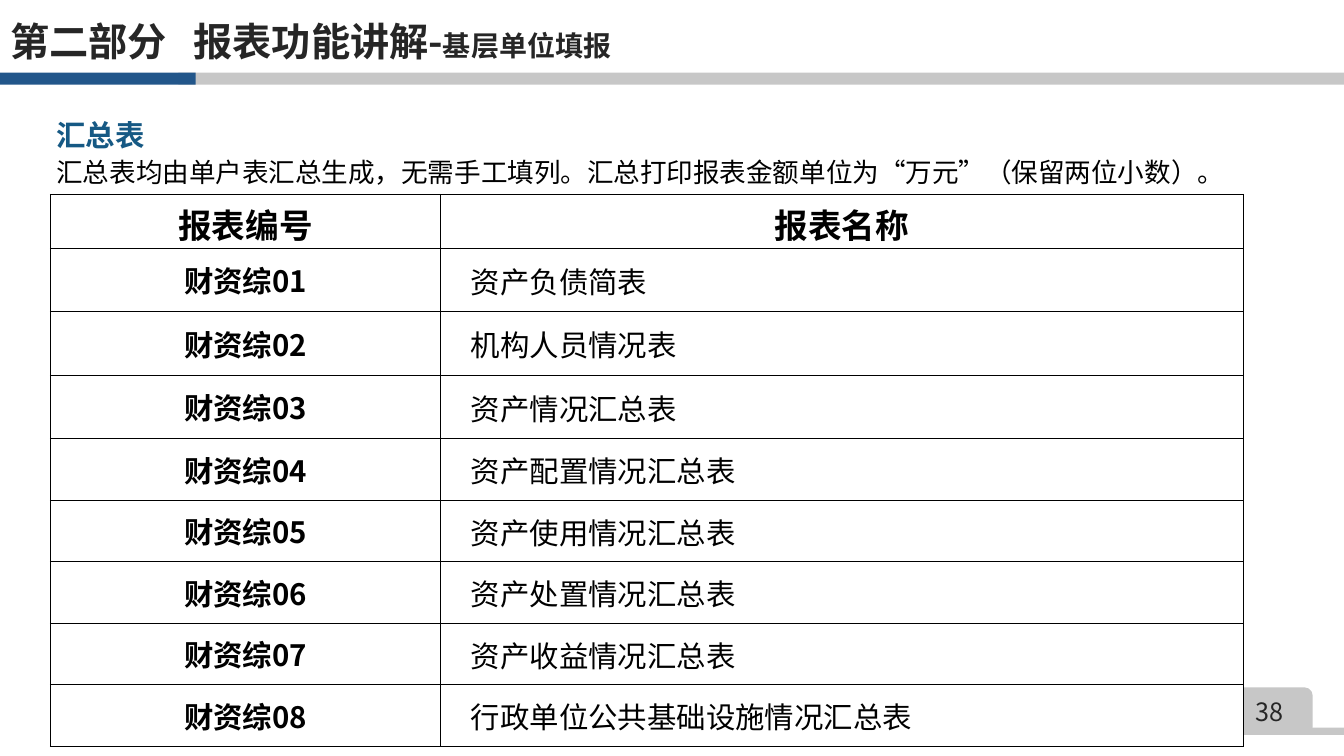
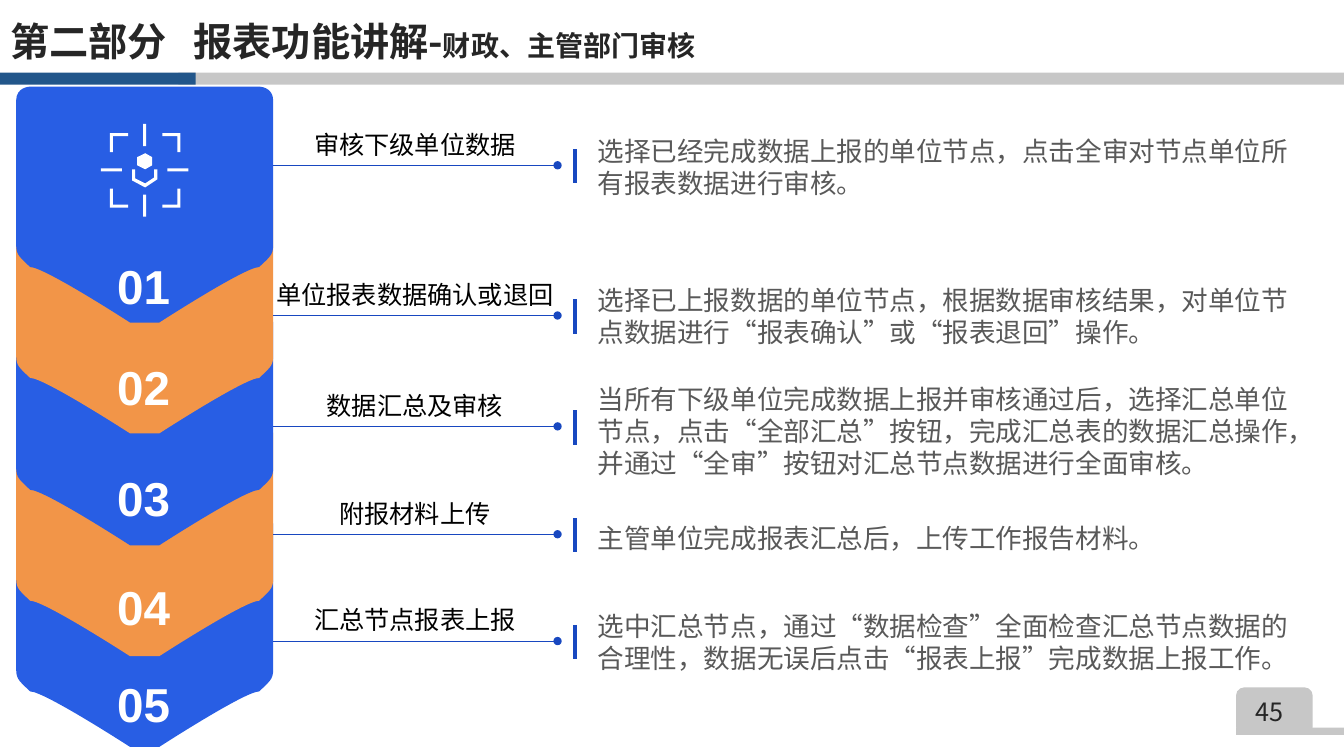
import lxml.etree
import pptx
import pptx.dml.color
import pptx.enum.shapes
import pptx.enum.text
import pptx.oxml.ns
import pptx.util

PX = 9144
SLIDE_W, SLIDE_H = 1333, 750
RGB = pptx.dml.color.RGBColor
WHITE = RGB(0xFF, 0xFF, 0xFF)
BLACK = RGB(0x00, 0x00, 0x00)
INK = RGB(0x26, 0x26, 0x26)
BODY_GREY = RGB(0x59, 0x59, 0x59)
BAND_GREY = RGB(0xC7, 0xC7, 0xC7)
BAND_BLUE = RGB(0x22, 0x56, 0x8A)
HEADING_BLUE = RGB(0x16, 0x59, 0x84)
LINE_BLUE = RGB(0x18, 0x48, 0xC0)
STEP_BLUE = RGB(0x28, 0x5E, 0xE4)
STEP_ORANGE = RGB(0xF2, 0x95, 0x48)
CJK = "Noto Sans CJK SC"
ALIGN = pptx.enum.text.PP_ALIGN
ANCHOR = pptx.enum.text.MSO_ANCHOR
SHAPE = pptx.enum.shapes.MSO_SHAPE

TITLE = {"size": 28, "bold": True, "color": INK}
SUBTITLE = {"size": 20, "bold": True, "color": INK}
PAGE = {"size": 18, "color": INK}
HEADING = {"size": 21, "bold": True, "color": HEADING_BLUE}
INTRO = {"size": 19}
TABLE_HEAD = {"size": 24, "bold": True}
TABLE_CODE = {"size": 21, "bold": True}
TABLE_NAME = {"size": 21}
STEP_NUMBER = {"size": 34, "bold": True, "color": WHITE, "name": "Arial"}
STEP_LABEL = {"size": 18}
STEP_DETAIL = {"size": 19, "color": BODY_GREY, "name": "Calibri"}

REPORTS = [
    "资产负债简表", "机构人员情况表", "资产情况汇总表", "资产配置情况汇总表",
    "资产使用情况汇总表", "资产处置情况汇总表", "资产收益情况汇总表",
    "行政单位公共基础设施情况汇总表",
]
ROW_HEIGHTS = [53] + [63] * 3 + [61] * 5

STEPS = [
    {"chevron": 86, "number": 231, "line": 164, "detail": 127, "label": "审核下级单位数据",
     "text": "选择已经完成数据上报的单位节点，点击全审对节点单位所有报表数据进行审核。"},
    {"chevron": 196, "number": 331, "line": 313, "detail": 275, "label": "单位报表数据确认或退回",
     "text": "选择已上报数据的单位节点，根据数据审核结果，对单位节点数据进行“报表确认”或“报表退回”操作。"},
    {"chevron": 307, "number": 441, "line": 423, "detail": 373, "label": "数据汇总及审核",
     "text": "当所有下级单位完成数据上报并审核通过后，选择汇总单位节点，点击“全部汇总”按钮，"
             "完成汇总表的数据汇总操作，并通过“全审”按钮对汇总节点数据进行全面审核。"},
    {"chevron": 417, "number": 549, "line": 530, "detail": 511, "label": "附报材料上传",
     "text": "主管单位完成报表汇总后，上传工作报告材料。"},
    {"chevron": 507, "number": 646, "line": 636, "detail": 598, "label": "汇总节点报表上报",
     "text": "选中汇总节点，通过“数据检查”全面检查汇总节点数据的合理性，"
             "数据无误后点击“报表上报”完成数据上报工作。"},
]

CHEVRON_START = (241, 0)
CHEVRON_CURVES = [
    ((241, 0), (255, 0), (255, 14)),
    ((255, 14), (255, 138), (255, 152)),
    ((255, 166), (255, 166), (241, 179)),
    ((227, 179), (142, 234), (142, 234)),
    ((128, 234), (128, 234), (113, 234)),
    ((113, 234), (28, 179), (14, 179)),
    ((0, 166), (0, 166), (0, 152)),
    ((0, 138), (0, 14), (0, 14)),
    ((0, 0), (14, 0), (14, 0)),
]
HEXAGON = [(0, -16), (-8, -12), (-8, -4), (0, 0), (7, -4), (7, -12)]
CRADLE = [(-13, 0), (-13, 11), (0, 18), (12, 10), (12, 0),
          (9, 0), (9, 8), (0, 14), (-10, 9), (-10, 0)]
CORNER = [(35, -37), (17, -37), (17, -34), (32, -34), (32, -18), (35, -18)]


def px(*lengths):
    """Turn px lengths into EMU."""
    return [pptx.util.Emu(round(length * PX)) for length in lengths]


def assign(target, values):
    """Set every attribute of a format dict."""
    for key, value in values.items():
        setattr(target, key, value)


def add_xml(parent, tag, **attributes):
    """Append a drawing element with its attributes."""
    return lxml.etree.SubElement(parent, pptx.oxml.ns.qn(tag), attributes)


def add_run(paragraph, text, style):
    """Append a run in the given text style."""
    run = paragraph.add_run()
    run.text = text
    values = {"name": CJK, "bold": False, **style}
    run.font.color.rgb = values.pop("color", BLACK)
    values["size"] = pptx.util.Pt(values["size"])
    assign(run.font, values)
    properties = run.font._element
    properties.set("lang", "zh-CN")
    add_xml(properties, "a:ea", typeface=CJK)


def format_frame(frame, wrap=True):
    """Give a text frame the shared insets and wrapping."""
    left, top = px(13, 7)
    assign(frame, {
        "margin_left": left, "margin_right": left, "margin_top": top, "margin_bottom": top,
        "word_wrap": wrap, "vertical_anchor": ANCHOR.TOP,
        "auto_size": pptx.enum.text.MSO_AUTO_SIZE.NONE,
    })


def add_text(slide, box, text, style, align=ALIGN.LEFT, spacing=1.0, wrap=True):
    """Place one paragraph of text in a box."""
    frame = slide.shapes.add_textbox(*px(*box)).text_frame
    format_frame(frame, wrap)
    paragraph = frame.paragraphs[0]
    assign(paragraph, {"alignment": align, "line_spacing": spacing})
    add_run(paragraph, text, style)


def paint(shape, color):
    """Fill a shape flatly, without line or shadow."""
    shape.shadow.inherit = False
    shape.fill.solid()
    shape.fill.fore_color.rgb = color
    shape.line.fill.background()


def add_block(slide, box, color, preset=SHAPE.RECTANGLE):
    """Place a flat preset shape."""
    paint(slide.shapes.add_shape(preset, *px(*box)), color)


def add_outline(slide, origin, points, color):
    """Place a closed outline given relative to an origin."""
    vertices = [px(origin[0] + x, origin[1] + y) for x, y in points]
    builder = slide.shapes.build_freeform(*vertices[0], scale=1.0)
    builder.add_line_segments(vertices[1:], close=True)
    outline = builder.convert_to_shape()
    paint(outline, color)
    return outline


def add_line(slide, start, end, width, dot=False):
    """Place a straight blue line, with an optional dot at its start."""
    line = slide.shapes.add_connector(
        pptx.enum.shapes.MSO_CONNECTOR.STRAIGHT, *px(*start, *end))
    line.line.color.rgb = LINE_BLUE
    line.line.width = pptx.util.Pt(width)
    if dot:
        add_xml(line.line._get_or_add_ln(), "a:headEnd", type="oval")
    add_xml(line._element.spPr, "a:effectLst")


def add_page(deck, subtitle, number):
    """Add a slide with the shared title, band and page tab."""
    slide = deck.slides.add_slide(deck.slide_layouts[5])
    add_block(slide, (177, 72, SLIDE_W - 177, 12), BAND_GREY)
    add_block(slide, (0, 72, 194, 12), BAND_BLUE)
    add_block(slide, (1226, 682, 76, 47), BAND_GREY, SHAPE.ROUNDED_RECTANGLE)
    add_block(slide, (1226, 722, SLIDE_W - 1226, 7), BAND_GREY)
    add_text(slide, (1223, 684, 73, 40), number, PAGE, ALIGN.CENTER)

    title = slide.shapes.title
    assign(title, dict(zip(("left", "top", "width", "height"), px(-3, 10, 777, 61))))
    format_frame(title.text_frame)
    paragraph = title.text_frame.paragraphs[0]
    paragraph.alignment = ALIGN.LEFT
    tabs = add_xml(paragraph._p.get_or_add_pPr(), "a:tabLst")
    add_xml(tabs, "a:tab", pos=str(182 * PX), algn="l")
    add_run(paragraph, "第二部分\t报表功能讲解-", TITLE)
    add_run(paragraph, subtitle, SUBTITLE)
    return slide


def format_cell(cell, text, style, align, margins):
    """Fill one bordered white table cell."""
    names = ("margin_left", "margin_top", "margin_right", "margin_bottom")
    assign(cell, dict(zip(names, px(*margins))))
    cell.vertical_anchor = ANCHOR.MIDDLE
    cell.fill.solid()
    cell.fill.fore_color.rgb = WHITE
    properties = cell._tc.get_or_add_tcPr()
    for index, side in enumerate(("a:lnL", "a:lnR", "a:lnT", "a:lnB")):
        border = add_xml(properties, side, w="12700")
        add_xml(add_xml(border, "a:solidFill"), "a:srgbClr", val=str(BLACK))
        properties.insert(index, border)
    paragraph = cell.text_frame.paragraphs[0]
    paragraph.alignment = align
    add_run(paragraph, text, style)


def add_report_table(slide, left, top):
    """Place the list of summary reports."""
    widths = (387, 796)
    table = slide.shapes.add_table(
        len(ROW_HEIGHTS), 2, *px(left, top, sum(widths), sum(ROW_HEIGHTS))).table
    assign(table, {"first_row": False, "horz_banding": False})
    for column, width in zip(table.columns, px(*widths)):
        column.width = width
    for row, height in zip(table.rows, px(*ROW_HEIGHTS)):
        row.height = height
    for column, text in enumerate(("报表编号", "报表名称")):
        format_cell(table.cell(0, column), text, TABLE_HEAD, ALIGN.CENTER, (13, 5, 13, 0))
    for row, name in enumerate(REPORTS, 1):
        format_cell(table.cell(row, 0), f"财资综{row:02d}", TABLE_CODE,
                    ALIGN.CENTER, (13, 7, 13, 7))
        format_cell(table.cell(row, 1), name, TABLE_NAME, ALIGN.LEFT, (30, 1, 1, 0))


def add_chevron(slide, left, top, color):
    """Place a chevron and bend its sides into cubic curves."""
    points = [CHEVRON_START] + [curve[-1] for curve in CHEVRON_CURVES]
    chevron = add_outline(slide, (left, top), points, color)
    sides = list(chevron._element.iter(pptx.oxml.ns.qn("a:lnTo")))
    for side, curve in zip(sides, CHEVRON_CURVES):
        bend = lxml.etree.Element(pptx.oxml.ns.qn("a:cubicBezTo"))
        for point in curve:
            x, y = px(*point)
            add_xml(bend, "a:pt", x=str(int(x)), y=str(int(y)))
        side.getparent().replace(side, bend)


def add_target_icon(slide, x, y):
    """Draw the target icon around its centre."""
    for across in (1, -1):
        for down in (1, -1):
            add_outline(slide, (x, y), [(across * a, down * b) for a, b in CORNER], WHITE)
    for box in ((-44, -2, 21, 3), (22, -2, 21, 3), (-2, -46, 3, 22), (-2, 24, 3, 22)):
        add_block(slide, (x + box[0], y + box[1], box[2], box[3]), WHITE)
    for outline in (HEXAGON, CRADLE):
        add_outline(slide, (x, y - 1), outline, WHITE)


def add_chevrons(slide, left):
    """Stack the numbered chevrons, the first on top."""
    for index, step in reversed(list(enumerate(STEPS))):
        add_chevron(slide, left, step["chevron"], STEP_ORANGE if index % 2 else STEP_BLUE)
    for index, step in enumerate(STEPS, 1):
        add_text(slide, (left + 70, step["number"], 113, 87), f"{index:02d}",
                 STEP_NUMBER, ALIGN.CENTER, spacing=1.3)
    add_target_icon(slide, left + 128, 169)


def add_step(slide, left, step):
    """Place the label, rule and explanation of one step."""
    y = step["line"]
    add_line(slide, (left + 282, y), (left, y), 0.5, dot=True)
    add_line(slide, (left + 299, y - 16), (left + 299, y + 18), 3)
    add_text(slide, (left - 12, y - 43, 305, 44), step["label"],
             STEP_LABEL, ALIGN.CENTER, wrap=False)
    add_text(slide, (left + 309, step["detail"], 723, 77), step["text"], STEP_DETAIL)


def build_summary_slide(deck):
    """Build the slide that lists the summary reports."""
    slide = add_page(deck, "基层单位填报", "38")
    add_text(slide, (43, 102, 1290, 52), "汇总表", HEADING, spacing=1.2)
    add_text(slide, (43, 148, 1222, 45),
             "汇总表均由单户表汇总生成，无需手工填列。汇总打印报表金额单位为“万元”（保留两位小数）。",
             INTRO)
    add_report_table(slide, 50, 193)


def build_review_slide(deck):
    """Build the slide that explains the review steps."""
    slide = add_page(deck, "财政、主管部门审核", "45")
    add_chevrons(slide, 16)
    for step in STEPS:
        add_step(slide, 271, step)


def main():
    """Build and save the deck."""
    deck = pptx.Presentation()
    deck.slide_width, deck.slide_height = px(SLIDE_W, SLIDE_H)
    build_summary_slide(deck)
    build_review_slide(deck)
    deck.save("out.pptx")


if __name__ == "__main__":
    main()
